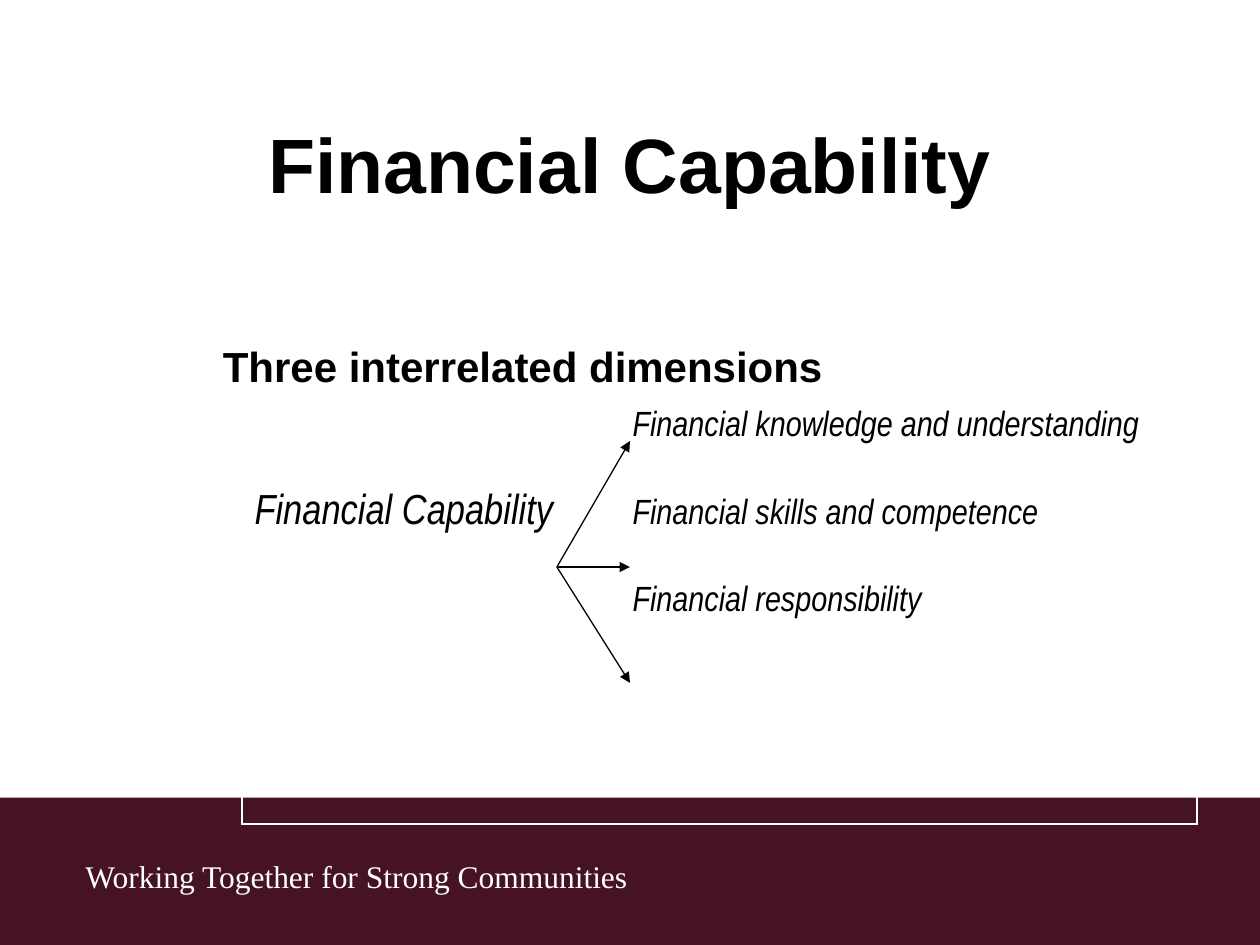
from lxml import etree
from pptx import Presentation
from pptx.dml.color import RGBColor
from pptx.enum.shapes import MSO_CONNECTOR, MSO_SHAPE
from pptx.enum.text import MSO_ANCHOR, PP_ALIGN
from pptx.oxml.ns import qn
from pptx.util import Inches, Pt

BLACK = RGBColor(0x00, 0x00, 0x00)
WHITE = RGBColor(0xFF, 0xFF, 0xFF)
MAROON = RGBColor(0x46, 0x13, 0x26)
STRAIGHT = MSO_CONNECTOR.STRAIGHT
RECTANGLE = MSO_SHAPE.RECTANGLE
MIDDLE = MSO_ANCHOR.MIDDLE
CENTER = PP_ALIGN.CENTER

# Left-hand term, dimension, space before in points
DIMENSIONS = [
    ("", "Financial knowledge and understanding", 0),
    ("Financial Capability", "Financial skills and competence", 28),
    ("", "Financial responsibility", 27),
]
ARROW_START = (4.42, 4.5)
ARROW_END_X = 5
ARROW_END_YS = (3.5, 4.5, 5.42)


def add_run(p, text, size, font="Arial", color=BLACK, bold=False, italic=False):
    r = p.add_run()
    r.text = text
    r.font.name = font
    r.font.size = Pt(size)
    r.font.color.rgb = color
    r.font.bold = bold
    r.font.italic = italic


def add_footer(slide, left, top, width, height):
    band = slide.shapes.add_shape(
        RECTANGLE, Inches(left), Inches(top), Inches(width), Inches(height))
    band.shadow.inherit = False
    band.fill.solid()
    band.fill.fore_color.rgb = MAROON
    band.line.fill.background()
    motto = slide.shapes.add_textbox(
        Inches(left + 0.58), Inches(top + 0.42), Inches(5.43), Inches(0.4))
    motto.fill.solid()
    motto.fill.fore_color.rgb = MAROON
    motto.text_frame.word_wrap = True
    add_run(motto.text_frame.paragraphs[0], "Working Together for Strong Communities",
            18, "Times New Roman", WHITE)


def set_title(slide, left, top, width, height):
    title = slide.shapes.title
    title.left, title.top = Inches(left), Inches(top)
    title.width, title.height = Inches(width), Inches(height)
    tf = title.text_frame
    tf.vertical_anchor = MIDDLE
    p = tf.paragraphs[0]
    p.alignment = CENTER
    add_run(p, "Financial Capability", 44, bold=True)


def add_subtitle(slide, left, top, width, height):
    sp = slide.shapes.add_textbox(
        Inches(left), Inches(top), Inches(width), Inches(height))
    tf = sp.text_frame
    tf.word_wrap = True
    tf.margin_top = Inches(0.2)
    add_run(tf.paragraphs[0], "Three interrelated dimensions", 24, bold=True)


def add_tab_stop(p, position):
    tabs = etree.SubElement(p._p.get_or_add_pPr(), qn("a:tabLst"))
    etree.SubElement(tabs, qn("a:tab"), pos=str(Inches(position)), algn="l")


def add_dimensions(slide, left, top, width, height):
    """One-cell table with the terms in two tabbed columns."""
    table = slide.shapes.add_table(
        1, 1, Inches(left), Inches(top), Inches(width), Inches(height)).table
    table.first_row = False
    table.horz_banding = False
    cell = table.cell(0, 0)
    cell.fill.background()
    tf = cell.text_frame
    for i, (term, dimension, gap) in enumerate(DIMENSIONS):
        p = tf.add_paragraph() if i else tf.paragraphs[0]
        add_tab_stop(p, 3)
        p.space_before = Pt(gap)
        add_run(p, term + "\t", 24, "Arial Narrow", italic=True)
        add_run(p, dimension, 20, "Arial Narrow", italic=True)


def add_arrow(slide, start, end):
    line = slide.shapes.add_connector(
        STRAIGHT, *(Inches(v) for v in start + end))
    line.line.color.rgb = BLACK
    line.line.width = Pt(0.75)
    etree.SubElement(line.line._get_or_add_ln(), qn("a:tailEnd"), type="triangle")
    etree.SubElement(line._element.spPr, qn("a:effectLst"))


def main():
    prs = Presentation()
    prs.slide_width, prs.slide_height = Inches(10), Inches(7.5)
    slide = prs.slides.add_slide(prs.slide_layouts[5])
    add_footer(slide, 0, 6.33, 10, 1.17)
    set_title(slide, 0.75, 0.67, 8.5, 1.25)
    add_subtitle(slide, 1.67, 2.5, 7.25, 0.67)
    add_dimensions(slide, 1.92, 3.17, 7.58, 3.37)
    for y in ARROW_END_YS:
        add_arrow(slide, ARROW_START, (ARROW_END_X, y))
    prs.save("out.pptx")


if __name__ == "__main__":
    main()
